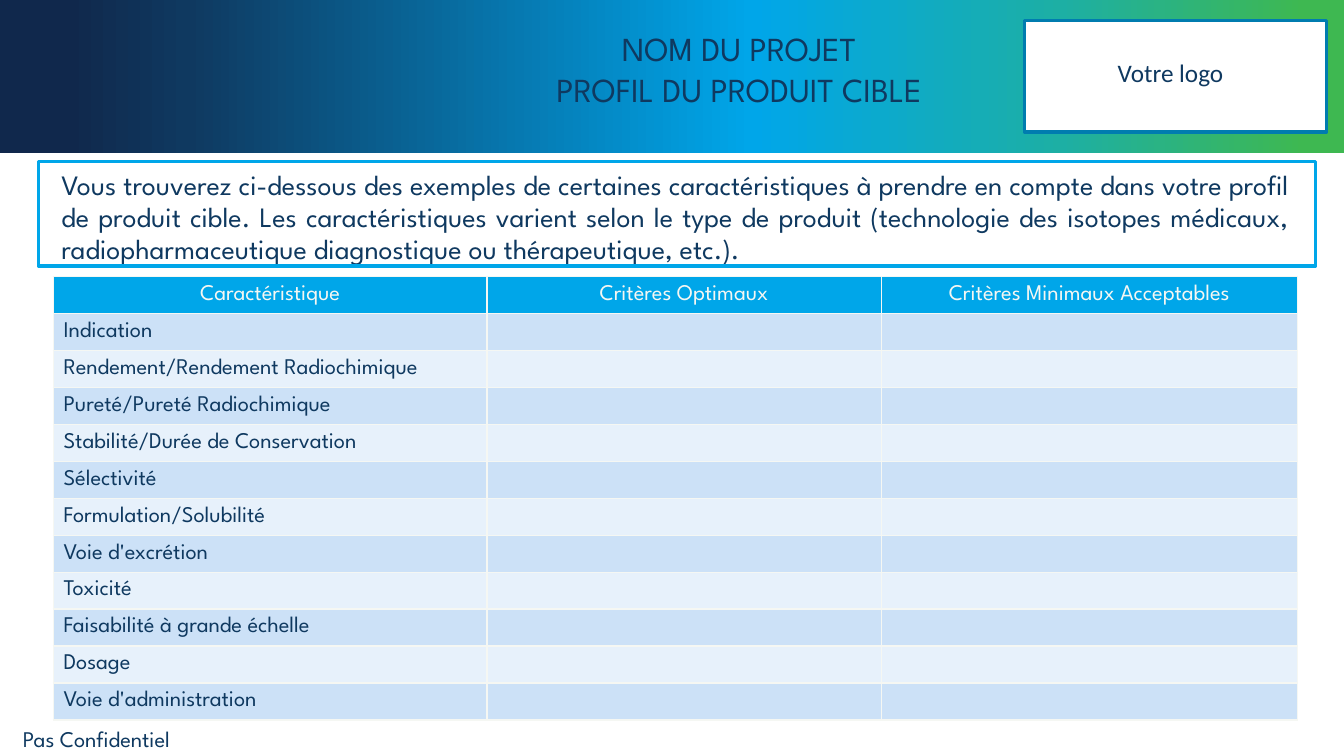
from lxml.etree import SubElement
from pptx import Presentation
from pptx.dml.color import RGBColor
from pptx.enum.shapes import MSO_SHAPE
from pptx.enum.text import MSO_ANCHOR, MSO_AUTO_SIZE, PP_ALIGN
from pptx.oxml.ns import qn
from pptx.util import Inches, Pt

COLORS = {
    "ink": "0F3960",
    "navy": "10284C",
    "sky": "00A6E9",
    "teal": "1DAFA4",
    "green": "3EB851",
    "blue": "007CAF",
    "white": "FFFFFF",
    "border": "F5F7F3",
    "band_dark": "CCE1F7",
    "band_light": "E7F1FB",
}
BAND_STOPS = [(5, "navy"), (14, "ink"), (56, "sky"), (79, "teal"), (97, "green")]
HEADERS = ["Caractéristique", "Critères Optimaux", "Critères Minimaux Acceptables"]
FEATURES = [
    "Indication",
    "Rendement/Rendement Radiochimique",
    "Pureté/Pureté Radiochimique",
    "Stabilité/Durée de Conservation",
    "Sélectivité",
    "Formulation/Solubilité",
    "Voie d'excrétion",
    "Toxicité",
    "Faisabilité à grande échelle",
    "Dosage",
    "Voie d'administration",
]
COLUMN_WIDTHS = [4.3, 3.91, 4.13]
INTRO = (
    "Vous trouverez ci-dessous des exemples de certaines caractéristiques à prendre en compte "
    "dans votre profil de produit cible. Les caractéristiques varient selon le type de produit "
    "(technologie des isotopes médicaux, radiopharmaceutique diagnostique ou thérapeutique, etc.)."
)


def color(name):
    return RGBColor.from_string(COLORS[name])


def write_lines(frame, lines, size, font="League Spartan", ink="ink", **layout):
    for index, line in enumerate(lines):
        para = frame.paragraphs[0] if index == 0 else frame.add_paragraph()
        for name, value in layout.items():
            setattr(para, name, value)
        span = para.add_run()
        span.text = line
        for name, value in {"name": font, "size": Pt(size), "bold": False}.items():
            setattr(span.font, name, value)
        span.font.color.rgb = color(ink)


def add_rectangle(page, box, fill=None, line=None):
    shape = page.shapes.add_shape(MSO_SHAPE.RECTANGLE, *map(Inches, box))
    shape.shadow.inherit = False
    if fill:
        shape.fill.solid()
        shape.fill.fore_color.rgb = color(fill)
    else:
        shape.fill.background()
    if line:
        shape.line.color.rgb = color(line)
        shape.line.width = Pt(2.25)
    else:
        shape.line.fill.background()
    return shape


def add_text(page, box, lines, size, wrap=True, **layout):
    frame = page.shapes.add_textbox(*map(Inches, box)).text_frame
    frame.word_wrap = wrap
    write_lines(frame, lines, size, **layout)


def add_banner(page, box):
    left, top, width, height = box
    banner = add_rectangle(page, box)
    banner.fill.gradient()
    banner.fill.gradient_angle = 0
    stops = banner.element.spPr.find(qn("a:gradFill")).find(qn("a:gsLst"))
    for stop in list(stops):
        stops.remove(stop)
    for percent, name in BAND_STOPS:
        stop = SubElement(stops, qn("a:gs"), pos=str(percent * 1000))
        SubElement(stop, qn("a:srgbClr"), val=COLORS[name])
    title = page.shapes.title
    title.element.addprevious(banner.element)
    place = {"left": left + 5.02, "top": top + 0.23, "width": 4.62, "height": 0.91}
    for name, value in place.items():
        setattr(title, name, Inches(value))
    frame = title.text_frame
    settings = {
        "word_wrap": True,
        "auto_size": MSO_AUTO_SIZE.NONE,
        "vertical_anchor": MSO_ANCHOR.TOP,
    }
    for name, value in settings.items():
        setattr(frame, name, value)
    write_lines(frame, ["NOM DU PROJET", "PROFIL DU PRODUIT CIBLE"], 24,
                alignment=PP_ALIGN.CENTER)


def add_logo_space(page, box):
    left, top, width, height = box
    add_rectangle(page, box, fill="white", line="blue")
    add_text(page, (left + 0.82, top + 0.32, 1.26, 0.4), ["Votre logo"], 18,
             wrap=False, font="Calibri", alignment=PP_ALIGN.CENTER)


def add_intro(page, box):
    left, top, width, height = box
    add_text(page, (left + 0.13, top + 0.04, width - 0.29, height - 0.13), [INTRO], 20,
             alignment=PP_ALIGN.JUSTIFY, line_spacing=0.95)
    add_rectangle(page, box, line="sky")


def format_cell(cell, fill):
    cell.vertical_anchor = MSO_ANCHOR.MIDDLE
    properties = cell._tc.get_or_add_tcPr()
    for side in ("lnL", "lnR", "lnT", "lnB"):
        edge = SubElement(properties, qn(f"a:{side}"), w=str(Pt(1)))
        solid = SubElement(edge, qn("a:solidFill"))
        SubElement(solid, qn("a:srgbClr"), val=COLORS["border"])
    cell.fill.solid()
    cell.fill.fore_color.rgb = color(fill)


def add_profile_table(page, box):
    rows = [HEADERS] + [[feature, "", ""] for feature in FEATURES]
    table = page.shapes.add_table(len(rows), len(HEADERS), *map(Inches, box)).table
    table.horz_banding = False
    for column, width in zip(table.columns, COLUMN_WIDTHS):
        column.width = Inches(width)
    for index, texts in enumerate(rows):
        table.rows[index].height = Inches(box[3] / len(rows))
        header = index == 0
        fill = "sky" if header else ("band_light", "band_dark")[index % 2]
        for cell, text in zip(table.rows[index].cells, texts):
            format_cell(cell, fill)
            if text:
                write_lines(cell.text_frame, [text], 16,
                            ink="border" if header else "ink",
                            alignment=PP_ALIGN.CENTER if header else PP_ALIGN.LEFT)
            else:
                cell.text_frame.paragraphs[0].font.size = Pt(16)


def add_confidentiality(page, box):
    add_text(page, box, ["Pas Confidentiel"], 16)


def main():
    deck = Presentation()
    deck.slide_width, deck.slide_height = Inches(13.33), Inches(7.5)
    page = deck.slides.add_slide(deck.slide_layouts[5])
    add_banner(page, (0, 0, 13.33, 1.52))
    add_logo_space(page, (10.16, 0.2, 3, 1.11))
    add_profile_table(page, (0.53, 2.74, 12.34, 4.4))
    add_intro(page, (0.38, 1.6, 12.67, 1.04))
    add_confidentiality(page, (0.13, 7.14, 2.06, 0.37))
    deck.save("out.pptx")


if __name__ == "__main__":
    main()
